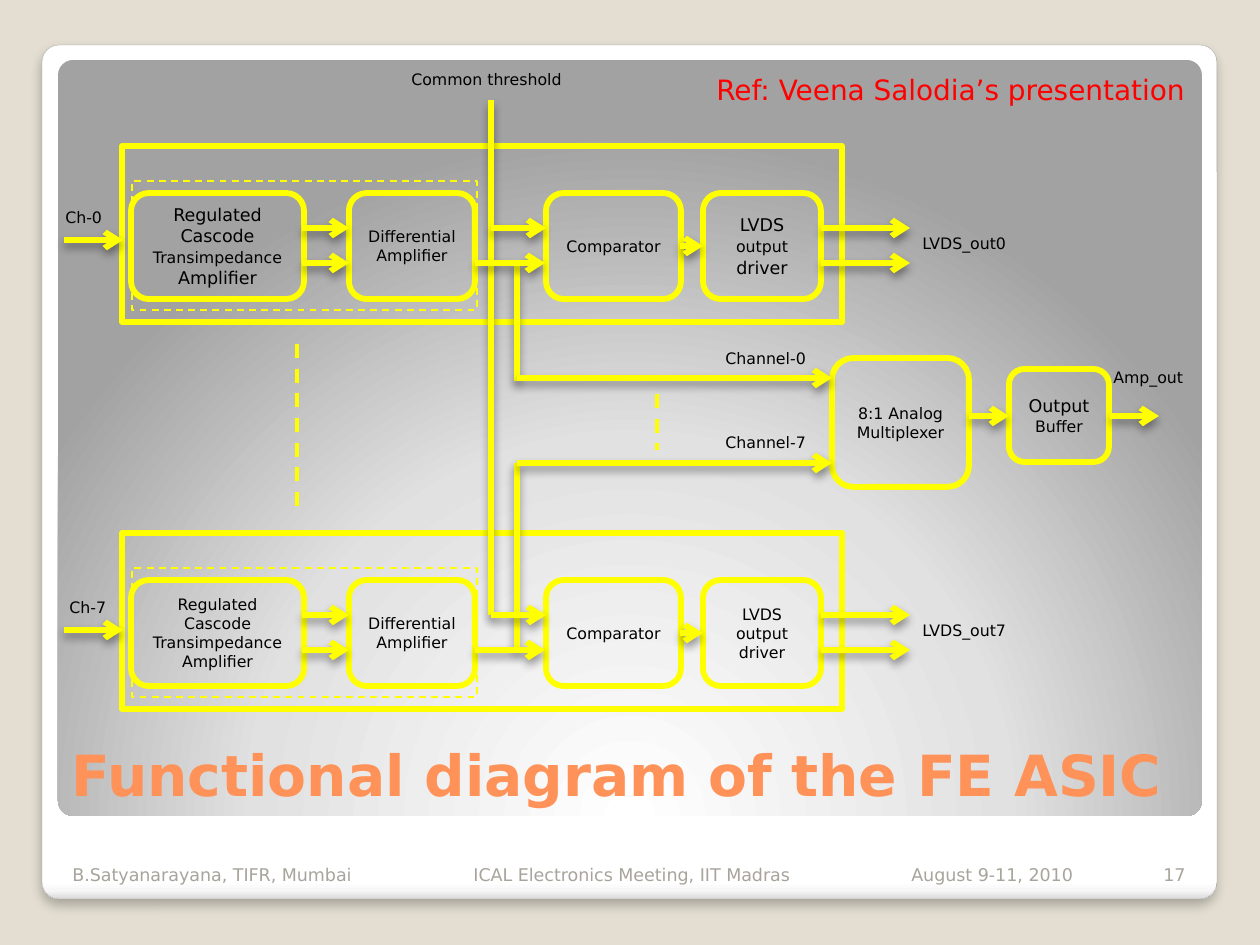
import pptx
import pptx.dml.color
import pptx.enum.dml
import pptx.enum.shapes
import pptx.enum.text
import pptx.oxml
import pptx.oxml.ns
import pptx.util
from dataclasses import dataclass

PX = 914400 // 126
NS = 'xmlns:a="http://schemas.openxmlformats.org/drawingml/2006/main"'
SHAPE = pptx.enum.shapes.MSO_SHAPE
ALIGN = pptx.enum.text.PP_ALIGN
ANCHOR = pptx.enum.text.MSO_ANCHOR
DASH = pptx.enum.dml.MSO_LINE.DASH
rgb = pptx.dml.color.RGBColor.from_string


@dataclass(frozen=True)
class Theme:
    font: str = "DejaVu Sans"
    backdrop: str = "E3DED1"
    edge: str = "A4A4A4"
    wire: str = "FFFF00"
    ink: str = "000000"
    title: str = "FF9258"
    footer: str = "A8A49B"
    reference: str = "FF0000"
    title_size: float = 32.4
    reference_size: int = 16
    large: int = 10
    small: int = 9
    heavy: float = 3.35
    medium: int = 2
    thin: int = 1


theme = Theme()


def write(frame, runs, color, align, anchor, bold=False):
    """Fill a text frame with one paragraph of (text, size) runs."""
    frame.vertical_anchor = anchor
    paragraph = frame.paragraphs[0]
    paragraph.alignment = align
    for text, size in runs:
        run = paragraph.add_run()
        run.text = text
        run.font.name = theme.font
        run.font.size = pptx.util.Pt(size)
        run.font.bold = bold
        run.font.color.rgb = rgb(color)


def effects(opacity=None, blur=0, distance=0):
    """Effect list with a downward shadow, or an empty one."""
    shadow = "" if opacity is None else (
        f'<a:outerShdw blurRad="{pptx.util.Pt(blur)}" dist="{pptx.util.Pt(distance)}" '
        f'dir="5400000" rotWithShape="0"><a:srgbClr val="{theme.ink}">'
        f'<a:alpha val="{opacity * 1000}"/></a:srgbClr></a:outerShdw>')
    return pptx.oxml.parse_xml(f"<a:effectLst {NS}>{shadow}</a:effectLst>")


presentation = pptx.Presentation()
presentation.slide_width = 1260 * PX
presentation.slide_height = 945 * PX
slide = presentation.slides.add_slide(presentation.slide_layouts[6])
slide.background.fill.solid()
slide.background.fill.fore_color.rgb = rgb(theme.backdrop)

# White card and grey panel: rectangle, gradient stops, gradient direction
panels = [
    ((42, 45, 1175, 854),
     [(0, "FFFFFF"), (98, "FFFFFF"), (99, "F7F7F7"), (100, "DADADA")],
     '<a:lin ang="5400000" scaled="0"/>'),
    ((58, 60, 1144, 756),
     [(0, "FFFFFF"), (55, "E1E1E1"), (100, "A2A2A2")],
     '<a:path path="circle"><a:fillToRect l="50000" t="175000" r="50000" b="-75000"/></a:path>'),
]
panel_shapes = []
for rect, stops, direction in panels:
    shape = slide.shapes.add_shape(SHAPE.ROUNDED_RECTANGLE, *(v * PX for v in rect))
    shape.adjustments[0] = 0.02
    shape.fill.background()
    shape.line.fill.background()
    shape.shadow.inherit = False
    stop_xml = "".join(f'<a:gs pos="{position * 1000}"><a:srgbClr val="{color}"/></a:gs>'
                       for position, color in stops)
    properties = shape._element.spPr
    properties.replace(
        properties.find(pptx.oxml.ns.qn("a:noFill")),
        pptx.oxml.parse_xml(f'<a:gradFill {NS} rotWithShape="1"><a:gsLst>{stop_xml}'
                            f"</a:gsLst>{direction}</a:gradFill>"))
    panel_shapes.append(shape)
card = panel_shapes[0]
card.line.color.rgb = rgb(theme.edge)
card.line.width = pptx.util.Pt(0.16)
card_properties = card._element.spPr
card_properties.replace(card_properties.find(pptx.oxml.ns.qn("a:effectLst")), effects(25, 6, 4))

# Blocks: preset, rectangle, line weight, dashed, runs
# Wires: start, end, arrow; labels: rectangle, text
L, S = theme.large, theme.small
blocks = [
    (SHAPE.ROUNDED_RECTANGLE, (832, 358, 137, 129), theme.heavy, False,
     [("8:1 Analog Multiplexer", S)]),
    (SHAPE.ROUNDED_RECTANGLE, (1009, 369, 100, 93), theme.heavy, False,
     [("Output ", L), ("Buffer", S)]),
]
wires = [
    ((491, 615), (491, 100), False),
    ((517, 263), (517, 381), False),
    ((517, 378), (832, 378), True),
    ((517, 463), (517, 650), False),
    ((517, 463), (832, 463), True),
    ((969, 416), (1009, 416), True),
    ((1110, 416), (1159, 416), True),
]
labels = [
    ((1101, 362, 98, 31), "Amp_out"),
    ((713, 343, 108, 31), "Channel-0"),
    ((713, 427, 108, 31), "Channel-7"),
    ((399, 64, 178, 31), "Common threshold"),
    ((53, 202, 64, 31), "Ch-0"),
    ((57, 592, 64, 31), "Ch-7"),
    ((910, 228, 115, 31), "LVDS_out0"),
    ((910, 615, 115, 31), "LVDS_out7"),
]

# The two channels share one layout; the first mixes two type sizes
channels = [
    (146, 240,
     [("Regulated Cascode ", L), ("Transimpedance", S), (" Amplifier", L)],
     [("LVDS ", L), ("output", S), (" driver", L)]),
    (533, 630,
     [("Regulated Cascode Transimpedance Amplifier", S)],
     [("LVDS output driver", S)]),
]
for top, input_y, amplifier, driver in channels:
    stages = [(131, 173, amplifier), (349, 126, [("Differential Amplifier", S)]),
              (546, 135, [("Comparator", S)]), (703, 118, driver)]
    for left, width, runs in stages:
        blocks.append((SHAPE.ROUNDED_RECTANGLE, (left, top + 47, width, 106),
                       theme.heavy, False, runs))
    blocks.append((SHAPE.RECTANGLE, (122, top, 720, 176), theme.heavy, False, []))
    blocks.append((SHAPE.RECTANGLE, (132, top + 35, 345, 129), theme.thin, True, []))
    upper, middle, lower = top + 82, top + 100, top + 117
    for start, end, y in [(302, 349, upper), (302, 349, lower), (475, 545, lower),
                          (491, 546, upper), (680, 703, middle), (821, 910, upper),
                          (821, 910, lower), (64, 123, input_y)]:
        wires.append(((start, y), (end, y), True))

for preset, rect, weight, dashed, runs in blocks:
    shape = slide.shapes.add_shape(preset, *(v * PX for v in rect))
    shape.shadow.inherit = False
    shape.fill.background()
    shape.line.color.rgb = rgb(theme.wire)
    shape.line.width = pptx.util.Pt(weight)
    if dashed:
        shape.line.dash_style = DASH
    shape.text_frame.word_wrap = True
    write(shape.text_frame, runs, theme.ink, ALIGN.CENTER, ANCHOR.MIDDLE)

# Dashed lines stand for the channels between 0 and 7
omitted = [((297, 344), (297, 515), None), ((657, 394), (657, 450), None)]
for start, end, arrow in wires + omitted:
    line = slide.shapes.add_connector(pptx.enum.shapes.MSO_CONNECTOR.STRAIGHT,
                                      *(v * PX for v in start + end))
    line.line.color.rgb = rgb(theme.wire)
    if arrow is None:
        line.line.width = pptx.util.Pt(theme.medium)
        line.line.dash_style = DASH
        line._element.spPr.append(effects())
    else:
        line.line.width = pptx.util.Pt(theme.heavy)
        line._element.spPr.append(effects(40, 5.2, 3))
    if arrow:
        line.line._get_or_add_ln().append(
            pptx.oxml.parse_xml(f'<a:tailEnd {NS} type="arrow"/>'))

# Texts: rectangle, text, size, colour, alignment, anchor, bold, wrap
texts = [(rect, text, S, theme.ink, ALIGN.LEFT, ANCHOR.TOP, False, False)
         for rect, text in labels]
texts += [
    ((59, 714, 1142, 100), "Functional diagram of the FE ASIC", theme.title_size,
     theme.title, ALIGN.LEFT, ANCHOR.BOTTOM, True, True),
    ((704, 66, 501, 47), "Ref: Veena Salodia’s presentation", theme.reference_size,
     theme.reference, ALIGN.LEFT, ANCHOR.TOP, False, True),
]
for left, width, text, align in [
    (60, 380, "B.Satyanarayana, TIFR, Mumbai", ALIGN.LEFT),
    (461, 400, "ICAL Electronics Meeting, IIT Madras", ALIGN.LEFT),
    (899, 230, "August 9-11, 2010", ALIGN.LEFT),
    (1139, 59, "17", ALIGN.RIGHT),
]:
    texts.append(((left, 842, width, 49), text, L, theme.footer, align,
                  ANCHOR.BOTTOM, False, True))

for rect, text, size, color, align, anchor, bold, wrap in texts:
    box = slide.shapes.add_textbox(*(v * PX for v in rect))
    box.text_frame.word_wrap = wrap
    write(box.text_frame, [(text, size)], color, align, anchor, bold)

presentation.save("out.pptx")
